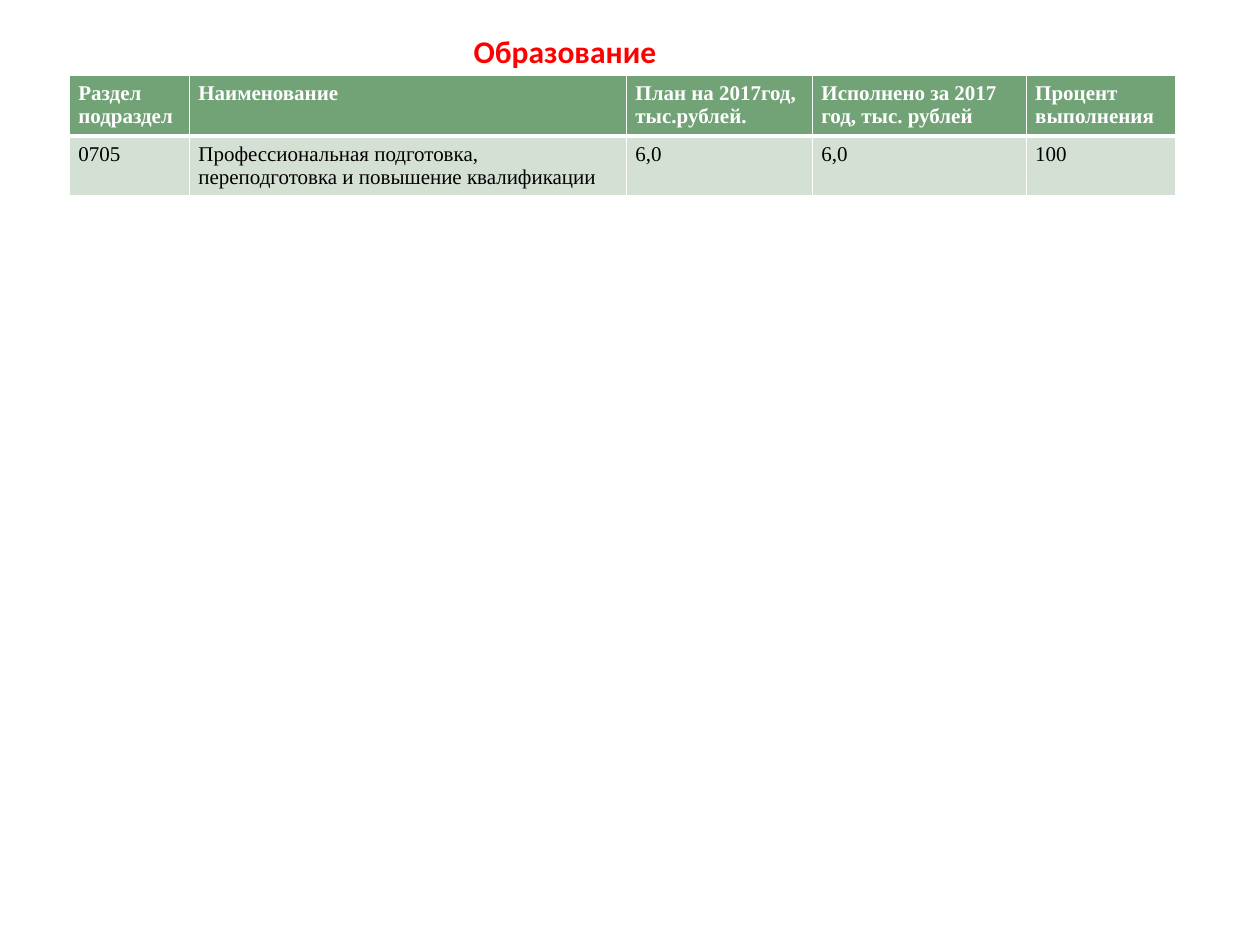
from dataclasses import dataclass

from lxml import etree
from pptx import Presentation
from pptx.dml.color import RGBColor
from pptx.oxml.ns import qn
from pptx.util import Cm, Pt

BLANK_LAYOUT = 6


@dataclass(frozen=True)
class Theme:
    title_color: str = "FF0000"
    header_fill: str = "72A376"
    header_text: str = "FFFFFF"
    body_fill: str = "D5E0D5"
    body_text: str = "000000"
    border: str = "FFFFFF"
    title_font: str = "Calibri"
    table_font: str = "Times New Roman"
    title_size: int = 18
    table_size: int = 12
    thin_line: float = 0.96
    thick_line: float = 3


THEME = Theme()
COLUMN_WIDTHS = (2.42, 8.81, 3.75, 4.31, 3.01)
ROW_HEIGHTS = (1.22, 1.2)
ROWS = (
    (
        "Раздел подраздел",
        "Наименование",
        "План на 2017год, тыс.рублей.",
        "Исполнено за 2017 год, тыс. рублей",
        "Процент\nвыполнения",
    ),
    (
        "0705",
        "Профессиональная подготовка, переподготовка и повышение квалификации",
        "6,0",
        "6,0",
        "100",
    ),
)


def style_font(paragraph, name, size, color, bold):
    font = paragraph.font
    font.name = name
    font.size = Pt(size)
    font.bold = bold
    font.color.rgb = RGBColor.from_string(color)


def set_borders(cell, thick_side):
    properties = cell._tc.get_or_add_tcPr()
    for side in ("lnL", "lnR", "lnT", "lnB"):
        width = THEME.thick_line if side == thick_side else THEME.thin_line
        line = etree.SubElement(properties, qn(f"a:{side}"), w=str(Pt(width)))
        fill = etree.SubElement(line, qn("a:solidFill"))
        etree.SubElement(fill, qn("a:srgbClr"), val=THEME.border)


def fill_cell(cell, text, is_header):
    set_borders(cell, "lnB" if is_header else "lnT")
    cell.fill.solid()
    cell.fill.fore_color.rgb = RGBColor.from_string(
        THEME.header_fill if is_header else THEME.body_fill
    )
    cell.margin_left = cell.margin_right = Cm(0.18)
    cell.margin_top = cell.margin_bottom = Cm(0.13)
    cell.text = text
    color = THEME.header_text if is_header else THEME.body_text
    for paragraph in cell.text_frame.paragraphs:
        style_font(paragraph, THEME.table_font, THEME.table_size, color, is_header)


def add_title(slide, left, top, width, height):
    shape = slide.shapes.add_textbox(Cm(left), Cm(top), Cm(width), Cm(height))
    shape.text_frame.word_wrap = True
    shape.text_frame.text = "Образование"
    style_font(
        shape.text_frame.paragraphs[0],
        THEME.title_font,
        THEME.title_size,
        THEME.title_color,
        True,
    )


def add_budget_table(slide, left, top):
    table = slide.shapes.add_table(
        len(ROWS),
        len(COLUMN_WIDTHS),
        Cm(left),
        Cm(top),
        Cm(sum(COLUMN_WIDTHS)),
        Cm(sum(ROW_HEIGHTS)),
    ).table
    for column, width in zip(table.columns, COLUMN_WIDTHS):
        column.width = Cm(width)
    for index, (row, height, texts) in enumerate(zip(table.rows, ROW_HEIGHTS, ROWS)):
        row.height = Cm(height)
        for cell, text in zip(row.cells, texts):
            fill_cell(cell, text, index == 0)


def main():
    presentation = Presentation()
    presentation.slide_width = Cm(25.4)
    presentation.slide_height = Cm(19.05)
    slide = presentation.slides.add_slide(presentation.slide_layouts[BLANK_LAYOUT])
    add_budget_table(slide, 1.4, 1.52)
    add_title(slide, 9.3, 0.53, 7.75, 1)
    presentation.save("out.pptx")


if __name__ == "__main__":
    main()
